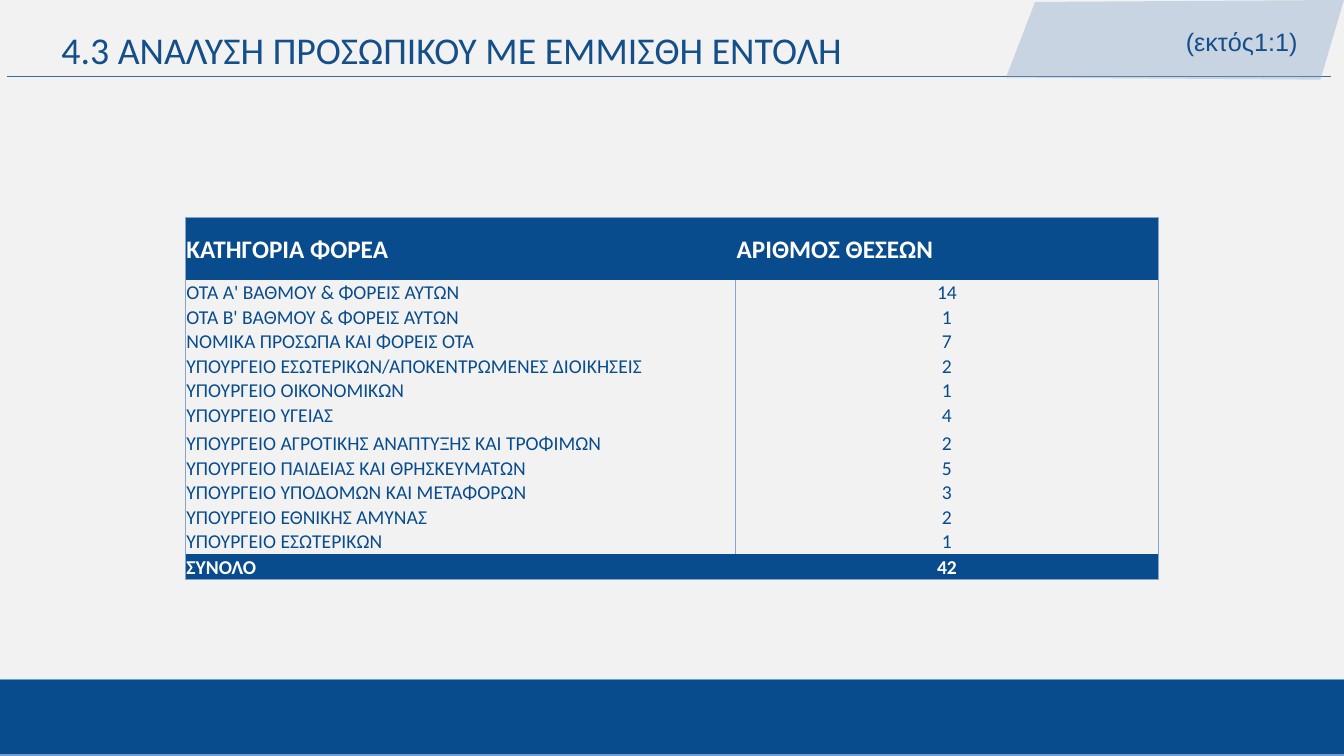
from pptx import Presentation
from pptx import util as u
from pptx.dml.color import RGBColor
from pptx.enum import shapes, text
from pptx.oxml.ns import qn
from lxml import etree

NAVY = RGBColor(0x08, 0x4C, 0x8D)
INK = RGBColor(0x14, 0x4F, 0x89)
RULE = RGBColor(0x37, 0x6A, 0x9F)
EDGE = RGBColor(0x6F, 0x9D, 0xD0)
MIST = RGBColor(0x87, 0xA4, 0xCB)
PAPER = RGBColor(0xF2, 0xF2, 0xF2)
WHITE = RGBColor(0xFF, 0xFF, 0xFF)

HEADER = ("ΚΑΤΗΓΟΡΙΑ ΦΟΡΕΑ", "ΑΡΙΘΜΟΣ ΘΕΣΕΩΝ")
POSTS = [
    ("ΟΤΑ Α' ΒΑΘΜΟΥ & ΦΟΡΕΙΣ ΑΥΤΩΝ", 14),
    ("ΟΤΑ Β' ΒΑΘΜΟΥ & ΦΟΡΕΙΣ ΑΥΤΩΝ", 1),
    ("ΝΟΜΙΚΑ ΠΡΟΣΩΠΑ ΚΑΙ ΦΟΡΕΙΣ ΟΤΑ", 7),
    ("ΥΠΟΥΡΓΕΙΟ ΕΣΩΤΕΡΙΚΩΝ/ΑΠΟΚΕΝΤΡΩΜΕΝΕΣ ΔΙΟΙΚΗΣΕΙΣ", 2),
    ("ΥΠΟΥΡΓΕΙΟ ΟΙΚΟΝΟΜΙΚΩΝ", 1),
    ("ΥΠΟΥΡΓΕΙΟ ΥΓΕΙΑΣ", 4),
    ("ΥΠΟΥΡΓΕΙΟ ΑΓΡΟΤΙΚΗΣ ΑΝΑΠΤΥΞΗΣ ΚΑΙ ΤΡΟΦΙΜΩΝ", 2),
    ("ΥΠΟΥΡΓΕΙΟ ΠΑΙΔΕΙΑΣ ΚΑΙ ΘΡΗΣΚΕΥΜΑΤΩΝ", 5),
    ("ΥΠΟΥΡΓΕΙΟ ΥΠΟΔΟΜΩΝ ΚΑΙ ΜΕΤΑΦΟΡΩΝ", 3),
    ("ΥΠΟΥΡΓΕΙΟ ΕΘΝΙΚΗΣ ΑΜΥΝΑΣ", 2),
    ("ΥΠΟΥΡΓΕΙΟ ΕΣΩΤΕΡΙΚΩΝ", 1),
]
TOTAL = ("ΣΥΝΟΛΟ", sum(n for _, n in POSTS))


class Deck:
    """Holds the presentation style and the current slide."""

    font = "Calibri"

    def __init__(self, width, height):
        self.prs = Presentation()
        self.prs.slide_width, self.prs.slide_height = u.Pt(width), u.Pt(height)
        self.s = self.prs.slides.add_slide(self.prs.slide_layouts[6])
        fill = self.s.background.fill
        fill.solid()
        fill.fore_color.rgb = PAPER

    def style(self, p, size, color, bold=False, font=None):
        for r in p.runs:
            r.font.size, r.font.bold = u.Pt(size), bold
            r.font.name = font or self.font
            r.font.color.rgb = color

    def rect(self, box, fill, line):
        sp = self.s.shapes.add_shape(shapes.MSO_SHAPE.RECTANGLE, *map(u.Pt, box))
        sp.shadow.inherit = False
        sp.fill.solid()
        sp.fill.fore_color.rgb = fill
        sp.line.color.rgb, sp.line.width = line, u.Pt(1)

    def rule(self, x1, x2, y):
        ln = self.s.shapes.add_connector(
            shapes.MSO_CONNECTOR.STRAIGHT, *map(u.Pt, (x1, y, x2, y)))
        ln.line.color.rgb, ln.line.width = RULE, u.Pt(0.5)
        etree.SubElement(ln._element.spPr, qn("a:effectLst"))

    def polygon(self, points, fill, opacity):
        start, *rest = [(u.Pt(x), u.Pt(y)) for x, y in points]
        fb = self.s.shapes.build_freeform(*start)
        fb.add_line_segments(rest, close=True)
        sp = fb.convert_to_shape()
        sp.shadow.inherit = False
        sp.fill.solid()
        sp.fill.fore_color.rgb = fill
        sp.line.fill.background()
        clr = sp._element.spPr.find(qn("a:solidFill"))[0]
        etree.SubElement(clr, qn("a:alpha"), val=str(opacity * 1000))

    def text(self, box, words, size, inset, align=None, spacing=None, font=None):
        tf = self.s.shapes.add_textbox(*map(u.Pt, box)).text_frame
        tf.word_wrap = True
        tf.margin_left = tf.margin_right = u.Pt(inset)
        tf.margin_top = tf.margin_bottom = u.Pt(3.6)
        tf.text = words
        p = tf.paragraphs[0]
        p.alignment, p.line_spacing = align, spacing
        self.style(p, size, INK, font=font)

    def borders(self, cell, sides):
        tcPr = cell._tc.get_or_add_tcPr()
        for side in "LRTB":
            ln = etree.SubElement(tcPr, qn("a:ln" + side), w=str(u.Pt(1)))
            if side in sides:
                fill = etree.SubElement(ln, qn("a:solidFill"))
                etree.SubElement(fill, qn("a:srgbClr"), val=str(MIST))
            else:
                etree.SubElement(ln, qn("a:noFill"))

    def table(self, left, top, widths, heights, rows):
        last = len(rows) - 1
        tbl = self.s.shapes.add_table(
            len(rows), len(widths), *map(u.Pt, (left, top, sum(widths), sum(heights)))).table
        tbl.first_row = tbl.horz_banding = False
        for col, w in zip(tbl.columns, widths):
            col.width = u.Pt(w)
        for i, (row, h) in enumerate(zip(rows, heights)):
            tbl.rows[i].height = u.Pt(h)
            band = i in (0, last)
            for j, value in enumerate(row):
                cell = tbl.cell(i, j)
                outer = "LR"[j] + {0: "T", last: "B"}.get(i, "")
                self.borders(cell, outer if band else "LR")
                if band:
                    cell.fill.solid()
                    cell.fill.fore_color.rgb = NAVY
                else:
                    cell.fill.background()
                cell.margin_left = cell.margin_right = cell.margin_top = u.Pt(0.7)
                cell.margin_bottom = 0
                anchor = text.MSO_ANCHOR
                cell.vertical_anchor = anchor.BOTTOM if i else anchor.MIDDLE
                cell.text_frame.text = str(value)
                p = cell.text_frame.paragraphs[0]
                if i and j:
                    p.alignment = text.PP_ALIGN.CENTER
                self.style(p, 14 if i else 18, WHITE if band else NAVY, band)


def main():
    d = Deck(960, 540)

    # Footer band and title
    d.rect((-1.4, 485.3, 962.6, 54), NAVY, EDGE)
    d.rule(5, 950.4, 54.7)
    d.text((40.3, 21.6, 920.9, 33.1), "4.3 ΑΝΑΛΥΣΗ ΠΡΟΣΩΠΙΚΟΥ ΜΕ ΕΜΜΙΣΘΗ ΕΝΤΟΛΗ",
           27, 3.6, spacing=0.8)

    # Corner tab
    d.polygon([(943.2, 56.9), (718.6, 55.4), (739.4, 1.4), (960, 0)], MIST, 38)
    d.text((744.5, 15.1, 189.4, 28.8), "(εκτός1:1)", 18, 7.2,
           align=text.PP_ALIGN.RIGHT, font="Arial")

    # Posts by category of body
    heights = [44.6] + [15.1] * len(POSTS) + [18.7]
    heights[7] = 20.2
    d.table(132.5, 155.5, (393.1, 301.7), heights, [HEADER, *POSTS, TOTAL])

    d.prs.save("out.pptx")


if __name__ == "__main__":
    main()
